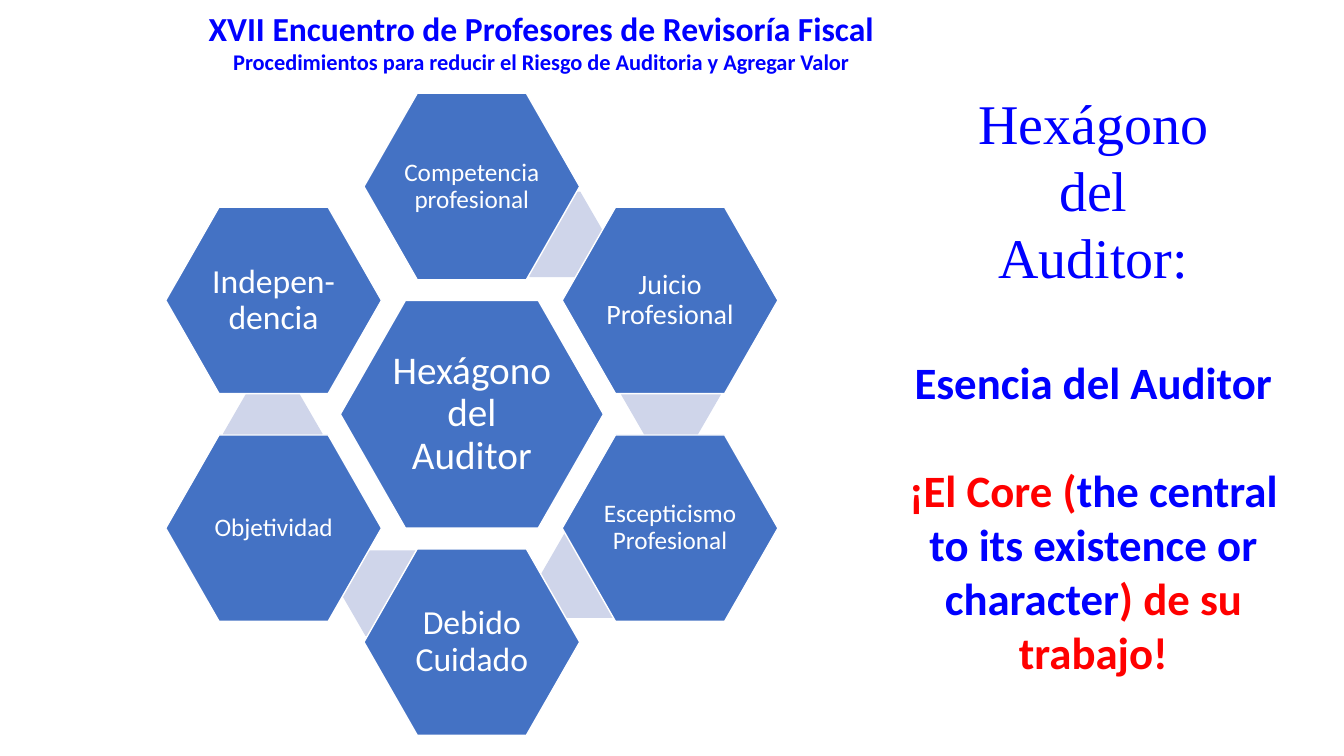
from math import cos, radians, sin

from pptx import Presentation
from pptx.dml.color import RGBColor
from pptx.enum.shapes import MSO_SHAPE as Shape
from pptx.enum.text import MSO_ANCHOR as Anchor, MSO_AUTO_SIZE as AutoSize, PP_ALIGN as Align
from pptx.util import Inches, Pt

COLORS = {
    "heading": "0000FF",
    "accent": "FF0000",
    "hexagon": "4472C4",
    "link": "CFD5EA",
    "white": "FFFFFF",
}


class SlideBuilder:
    """Holds the style and the current slide."""

    def __init__(self, slide, font="Calibri"):
        self.slide = slide
        self.font = font

    def color(self, name):
        return RGBColor.from_string(COLORS[name])

    def run(self, paragraph, text, size, color, bold=False, font=None):
        paragraph.alignment = Align.CENTER
        run = paragraph.add_run()
        run.text = text
        run.font.name = font or self.font
        run.font.size = Pt(size)
        run.font.bold = bold
        run.font.color.rgb = self.color(color)

    def text(self, left, top, width, height, paragraphs, bold=True, font=None):
        """Each paragraph is (space before, size, [(text, color), ...])."""
        box = self.slide.shapes.add_textbox(*map(Inches, (left, top, width, height)))
        frame = box.text_frame
        frame.word_wrap = True
        frame.auto_size = AutoSize.SHAPE_TO_FIT_TEXT
        for index, (gap, size, runs) in enumerate(paragraphs):
            paragraph = frame.add_paragraph() if index else frame.paragraphs[0]
            if gap:
                paragraph.space_before = Pt(gap)
            for words, color in runs:
                self.run(paragraph, words, size, color, bold, font)

    def hexagon(self, left, top, width, height, fill, adjust):
        hexagon = self.slide.shapes.add_shape(
            Shape.HEXAGON, *map(Inches, (left, top, width, height)))
        hexagon.shadow.inherit = False
        hexagon.adjustments[0] = adjust
        hexagon.fill.solid()
        hexagon.fill.fore_color.rgb = self.color(fill)
        hexagon.line.fill.background()
        return hexagon

    def link(self, left, top):
        self.hexagon(left, top, 0.99, 0.85, "link", 0.289)

    def quality(self, center_x, center_y, width, height, label, size, inset):
        hexagon = self.hexagon(center_x - width / 2, center_y - height / 2,
                               width, height, "hexagon", 0.286)
        hexagon.line.color.rgb = self.color("white")
        hexagon.line.width = Pt(1)
        frame = hexagon.text_frame
        frame.word_wrap = True
        frame.vertical_anchor = Anchor.MIDDLE
        frame.margin_left = frame.margin_right = Inches(inset)
        frame.margin_top = frame.margin_bottom = Inches(inset)
        paragraph = frame.paragraphs[0]
        paragraph.line_spacing = 0.9
        self.run(paragraph, label, size, "white")


def main():
    deck = Presentation()
    deck.slide_width, deck.slide_height = Inches(13.33), Inches(7.5)
    builder = SlideBuilder(deck.slides.add_slide(deck.slide_layouts[6]))

    # Event heading
    builder.text(1.94, 0.03, 6.86, 0.77, [
        (0, 24, [("XVII Encuentro de Profesores de Revisoría Fiscal", "heading")]),
        (0, 16, [("Procedimientos para reducir el Riesgo de Auditoria y Agregar Valor",
                  "heading")]),
    ])

    # Title and message on the right
    builder.text(9.43, 0.83, 2.83, 2.12,
                 [(0, 40, [("Hexágono del Auditor:", "heading")])],
                 bold=False, font="Times New Roman")
    builder.text(8.84, 3.47, 4.01, 3.33, [
        (0, 32, [("Esencia del Auditor", "heading")]),
        (39, 32, [("¡El Core (", "accent"),
                  ("the central to its existence or character", "heading"),
                  (") de su trabajo!", "accent")]),
    ])

    # Central hexagon
    center_x, center_y = 4.68, 4.11
    builder.quality(center_x, center_y, 2.61, 2.26, "Hexágono del Auditor", 28, 0.04)

    # Ring, clockwise from the top: label, size, link drawn behind the hexagon
    ring = [
        ("Competencia profesional", 18, (5.01, 1.9)),
        ("Juicio Profesional", 20, (6.16, 3.49)),
        ("Escepticismo Profesional", 18, (5.36, 5.28)),
        ("Debido Cuidado", 24, (3.38, 5.46)),
        ("Objetividad", 18, (2.21, 3.88)),
        ("Indepen-dencia", 24, None),
    ]
    radius_x, radius_y = 2.27, 2.26
    for index, (label, size, link) in enumerate(ring):
        if link:
            builder.link(*link)
        angle = radians(60 * index)
        builder.quality(center_x + radius_x * sin(angle), center_y - radius_y * cos(angle),
                        2.14, 1.85, label, size, 0.03)

    deck.save("out.pptx")


if __name__ == "__main__":
    main()
